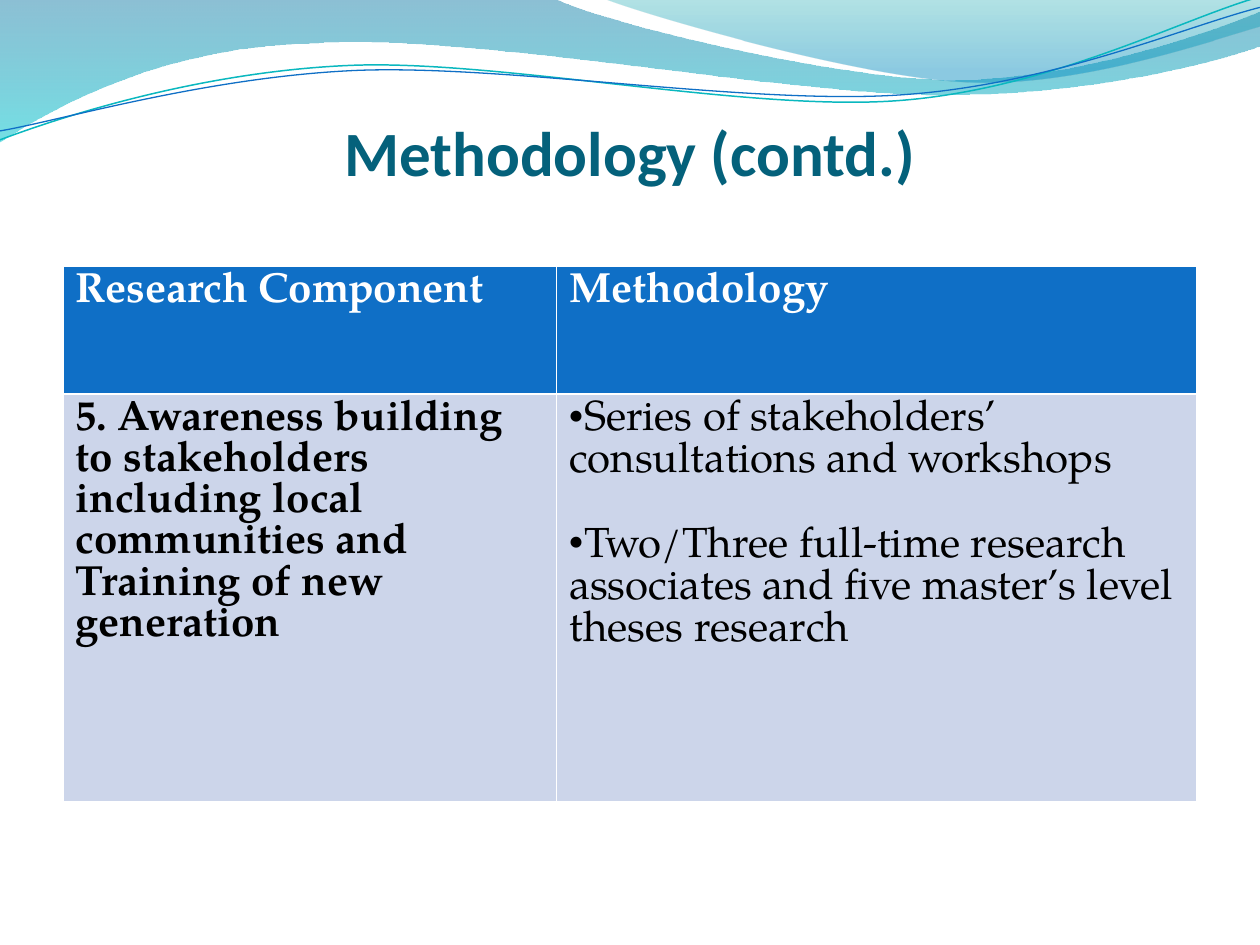
"""Build the research methodology slide with its wave banner and component table."""
import pptx
import pptx.dml.color
import pptx.enum.text
import pptx.oxml
import pptx.oxml.ns
import pptx.util
from pptx.util import Cm, Pt

TITLE = "Methodology (contd.)"
HEADINGS = ["Research Component", "Methodology"]
COMPONENT = ("5. Awareness building to stakeholders including local "
             "communities and Training of new generation")
METHODS = ["Series of stakeholders’ consultations and workshops",
           "Two/Three full-time research associates and five master’s level theses research"]

WAVES = [
    {"start": (0, 0), "stops": [(0, "0074A1", 45), (1, "00C6CF", 55)], "steps": [
        (11.18, -0.03), (12.09, 0.43, 16.87, 1.6, 19.25, 1.6),
        (21.67, 1.6, 24.33, 0.66, 25.4, 0.23), (25.43, 0.91),
        (24.97, 1.12, 22.1, 1.93, 18.95, 1.91), (15.8, 1.91, 9.7, 0.71, 6.53, 0.86),
        (3.28, 0.91, 1.17, 2.11, -0.03, 2.87), (0, 0)]},
    {"start": (12.17, -0.03), "stops": [(0, "00A1A9", 30), (0.8, "008BBF", 45)], "steps": [
        (12.93, 0.28, 17.32, 1.57, 19.53, 1.65),
        (21.74, 1.75, 24.41, 0.81, 25.4, 0.53), (25.4, 0), (12.17, -0.03)]},
    {"start": (0, 2.82), "line": ("0AB8BF", 0.85), "steps": [
        (1.22, 2.36, 4.01, 1.45, 7.04, 1.32), (10.03, 1.19, 15.06, 2.26, 18.11, 2.03),
        (21.16, 1.8, 23.83, 0.38, 25.35, -0.05)]},
    {"start": (0, 2.64), "line": ("0F6FC6", 0.75), "steps": [
        (1.19, 2.44, 4.17, 1.55, 7.19, 1.42), (10.24, 1.3, 15.16, 2.13, 18.21, 1.91),
        (21.23, 1.7, 23.9, 0.53, 25.4, 0.15)]},
]
COLUMN_WIDTHS = [9.95, 12.91]
ROW_HEIGHTS = [2.57, 8.23]
TITLE_FONT = {"name": "Calibri", "size": Pt(36), "bold": True}
STRONG_FONT = {"name": "TeX Gyre Pagella", "size": Pt(24), "bold": True}
METHOD_FONT = {**STRONG_FONT, "bold": False}
TITLE_FRAME = {"word_wrap": True, "margin_left": 0, "margin_right": 0, "margin_bottom": 0,
               "margin_top": Cm(0.13), "vertical_anchor": pptx.enum.text.MSO_ANCHOR.BOTTOM}


def rgb(code):
    return pptx.dml.color.RGBColor.from_string(code)


def xml(tag, **attributes):
    listed = "".join(f' {key}="{value}"' for key, value in attributes.items())
    return pptx.oxml.parse_xml(f'<a:{tag} {pptx.oxml.ns.nsdecls("a")}{listed}/>')


def apply(target, values):
    for key, value in values.items():
        setattr(target, key, value)


def write(paragraph, text, font, color):
    run = paragraph.add_run()
    run.text = text
    apply(run.font, font)
    run.font.color.rgb = rgb(color)


def bend(shape, steps):
    segments = iter(list(shape._element.iter(pptx.oxml.ns.qn("a:lnTo"))))
    for step in steps:
        group = [next(segments) for _ in range(len(step) // 2)]
        if len(group) == 3:
            curve = xml("cubicBezTo")
            group[0].addprevious(curve)
            for segment in group:
                curve.append(segment[0])
                segment.getparent().remove(segment)


def add_wave(slide, wave):
    x, y = wave["start"]
    points = [(Cm(step[i]), Cm(step[i + 1]))
              for step in wave["steps"] for i in range(0, len(step), 2)]
    builder = slide.shapes.build_freeform(Cm(x), Cm(y), scale=1.0)
    builder.add_line_segments(points, close="stops" in wave)
    shape = builder.convert_to_shape()
    bend(shape, wave["steps"])
    shape.shadow.inherit = False
    if "line" in wave:
        color, width = wave["line"]
        shape.fill.background()
        shape.line.color.rgb = rgb(color)
        shape.line.width = Pt(width)
        return
    shape.line.fill.background()
    shape.fill.gradient()
    shape.fill.gradient_angle = 270
    for stop, (position, color, _) in zip(shape.fill.gradient_stops, wave["stops"]):
        stop.position = position
        stop.color.rgb = rgb(color)
    colors = shape._element.spPr.iter(pptx.oxml.ns.qn("a:srgbClr"))
    for color, (_, _, opacity) in zip(colors, wave["stops"]):
        color.append(xml("alpha", val=opacity * 1000))


def add_methodology_table(slide):
    table = slide.shapes.add_table(2, 2, Cm(1.27), Cm(5.37), Cm(sum(COLUMN_WIDTHS)),
                                   Cm(sum(ROW_HEIGHTS))).table
    for column, width in zip(table.columns, COLUMN_WIDTHS):
        column.width = Cm(width)
    for row, height, color in zip(table.rows, ROW_HEIGHTS, ["0F6FC6", "CCD5EA"]):
        row.height = Cm(height)
        for cell in row.cells:
            cell.fill.solid()
            cell.fill.fore_color.rgb = rgb(color)
    for cell, heading in zip(table.rows[0].cells, HEADINGS):
        write(cell.text_frame.paragraphs[0], heading, STRONG_FONT, "FFFFFF")
    write(table.cell(1, 0).text_frame.paragraphs[0], COMPONENT, STRONG_FONT, "000000")
    methods = table.cell(1, 1).text_frame
    for index, method in enumerate(METHODS):
        paragraph = methods.add_paragraph() if index else methods.paragraphs[0]
        paragraph.space_before = Pt(24 if index else 0)
        bullet = paragraph._p.get_or_add_pPr()
        bullet.append(xml("buFont", typeface="OpenSymbol"))
        bullet.append(xml("buChar", char="•"))
        write(paragraph, method, METHOD_FONT, "000000")


def main():
    deck = pptx.Presentation()
    apply(deck, {"slide_width": Cm(25.4), "slide_height": Cm(19.05)})
    slide = deck.slides.add_slide(deck.slide_layouts[6])
    for wave in WAVES:
        add_wave(slide, wave)
    title = slide.shapes.add_textbox(Cm(1.27), Cm(1.96), Cm(22.86), Cm(1.85)).text_frame
    apply(title, TITLE_FRAME)
    title.paragraphs[0].alignment = pptx.enum.text.PP_ALIGN.CENTER
    write(title.paragraphs[0], TITLE, TITLE_FONT, "04617B")
    add_methodology_table(slide)
    deck.save("out.pptx")


if __name__ == "__main__":
    main()
